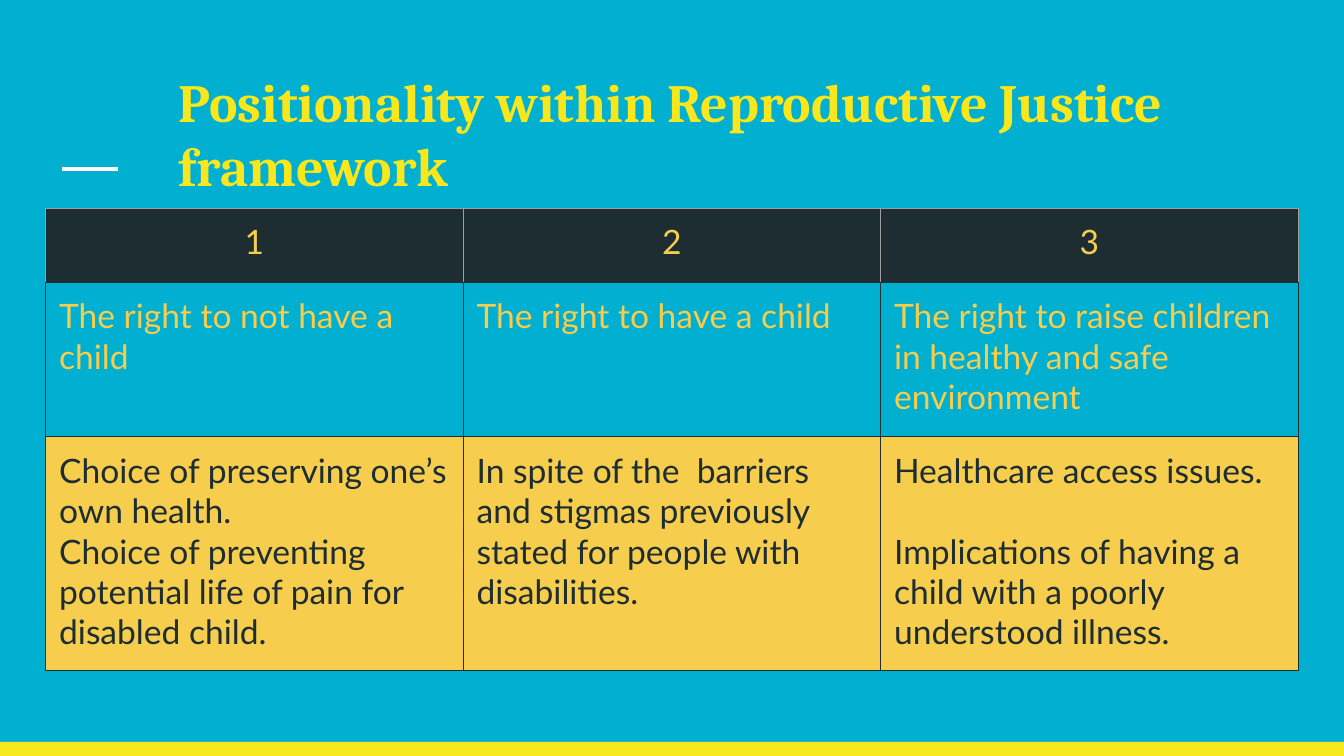
from lxml.etree import SubElement
from pptx import Presentation
from pptx.dml.color import RGBColor
from pptx.enum.shapes import MSO_CONNECTOR, MSO_SHAPE
from pptx.enum.text import MSO_ANCHOR, MSO_AUTO_SIZE, PP_ALIGN
from pptx.oxml import parse_xml
from pptx.oxml.ns import nsdecls, qn
from pptx.util import Inches, Pt

TURQUOISE = RGBColor(0x01, 0xAF, 0xD1)
YELLOW = RGBColor(0xF8, 0xE7, 0x1C)
GOLD = RGBColor(0xF6, 0xCD, 0x4C)
DARK = RGBColor(0x1E, 0x2D, 0x31)
GRAY = RGBColor(0x9E, 0x9E, 0x9E)
WHITE = RGBColor(0xFF, 0xFF, 0xFF)

HEADINGS = ["1", "2", "3"]
RIGHTS = [
    "The right to not have a child",
    "The right to have a child",
    "The right to raise children in healthy and safe environment",
]
POSITIONS = [
    "Choice of preserving one’s own health.\n"
    "Choice of preventing potential life of pain for disabled child.",
    "In spite of the  barriers and stigmas previously stated for people with disabilities.",
    "Healthcare access issues.\n"
    "Implications of having a child with a poorly understood illness.",
]


def write_text(frame, text, font="Lato", size=18, color=GOLD, bold=False,
               align=PP_ALIGN.LEFT, gap=0):
    """Fill a text frame with one paragraph per line of text."""
    for index, line in enumerate(text.split("\n")):
        para = frame.add_paragraph() if index else frame.paragraphs[0]
        para.alignment = align
        para.space_before = Pt(gap if index else 0)
        span = para.add_run()
        span.text = line
        span.font.name = font
        span.font.size = Pt(size)
        span.font.bold = bold
        span.font.color.rgb = color


def set_margins(target):
    """Give a cell or text frame equal insets."""
    for side in ("left", "top", "right", "bottom"):
        setattr(target, f"margin_{side}", Inches(0.1))


def set_borders(cell, **colors):
    """Draw the cell edges in the given colors."""
    properties = cell._tc.get_or_add_tcPr()
    for index, (side, color) in enumerate(colors.items()):
        properties.insert(index, parse_xml(
            f'<a:ln{side} {nsdecls("a")} w="{Pt(0.75)}"><a:solidFill>'
            f'<a:srgbClr val="{color}"/></a:solidFill></a:ln{side}>'))


class SlideBuilder:
    """Hold the deck and draw styled elements on its slide."""

    def __init__(self):
        self.deck = Presentation()
        self.deck.slide_width = Inches(10)
        self.deck.slide_height = Inches(10 * 9 / 16)
        self.page = self.deck.slides.add_slide(self.deck.slide_layouts[5])
        self.page.background.fill.solid()
        self.page.background.fill.fore_color.rgb = TURQUOISE

    def band(self, left, top, width, height, color):
        box = self.page.shapes.add_shape(
            MSO_SHAPE.RECTANGLE, *map(Inches, (left, top, width, height)))
        box.shadow.inherit = False
        box.fill.solid()
        box.fill.fore_color.rgb = color
        box.line.fill.background()

    def rule(self, left, right, top, color, weight):
        line = self.page.shapes.add_connector(
            MSO_CONNECTOR.STRAIGHT, *map(Inches, (left, top, right, top)))
        line.line.color.rgb = color
        line.line.width = Pt(weight)
        SubElement(line._element.spPr, qn("a:effectLst"))

    def title(self, text, left, top, width, height):
        box = self.page.shapes.title
        box.left, box.top, box.width, box.height = map(
            Inches, (left, top, width, height))
        frame = box.text_frame
        frame.word_wrap = True
        frame.auto_size = MSO_AUTO_SIZE.NONE
        frame.vertical_anchor = MSO_ANCHOR.TOP
        set_margins(frame)
        write_text(frame, text, font="Cambria", size=28.8, color=YELLOW, bold=True)

    def table(self, rows, left, top, width, heights):
        columns = len(rows[0][0])
        table = self.page.shapes.add_table(
            len(rows), columns, Inches(left), Inches(top),
            Inches(width), Inches(sum(heights))).table
        table.first_row = table.horz_banding = False
        for column in table.columns:
            column.width = Inches(width / columns)
        for row, height, (texts, fill, edge, style) in zip(table.rows, heights, rows):
            row.height = Inches(height)
            for cell, text in zip(row.cells, texts):
                set_margins(cell)
                if fill is None:
                    cell.fill.background()
                else:
                    cell.fill.solid()
                    cell.fill.fore_color.rgb = fill
                set_borders(cell, L=edge, R=edge, T=edge, B=DARK)
                gap = 21.6 if text.startswith("Healthcare") else 0
                write_text(cell.text_frame, text, gap=gap, **style)


def main():
    """Build and save the slide."""
    builder = SlideBuilder()
    builder.band(0, 5.52, 10, 0.11, YELLOW)
    builder.rule(0.46, 0.88, 1.26, WHITE, 2.25)
    builder.title("Positionality within Reproductive Justice framework",
                  1.23, 0.41, 8.43, 0.71)
    builder.table([
        (HEADINGS, DARK, GRAY, {"align": PP_ALIGN.CENTER}),
        (RIGHTS, None, DARK, {}),
        (POSITIONS, GOLD, DARK, {"color": DARK}),
    ], 0.34, 1.55, 9.32, [0.55, 1.15, 1.74])
    builder.deck.save("out.pptx")


if __name__ == "__main__":
    main()
